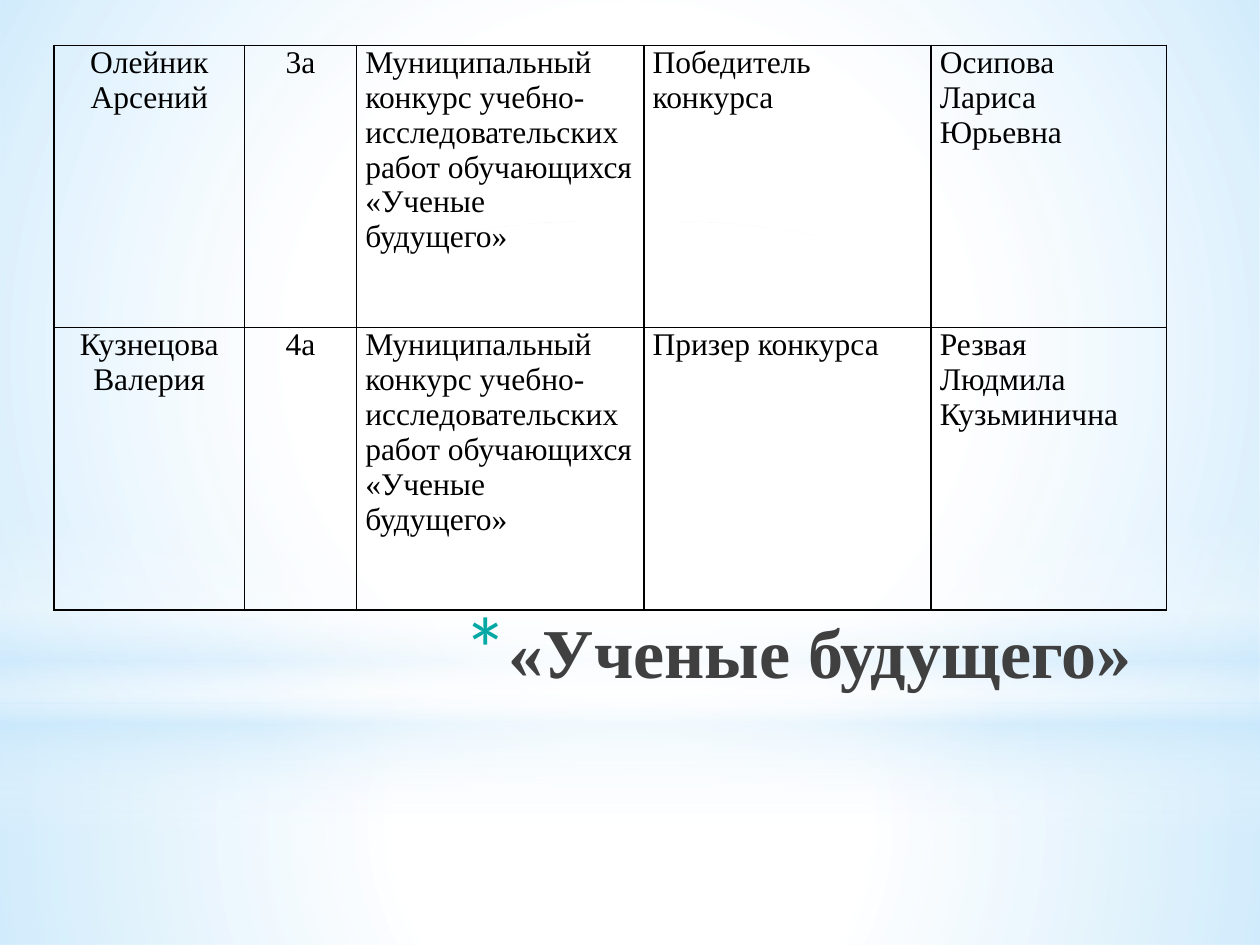
from lxml import etree
from pptx import Presentation
from pptx.dml.color import RGBColor
from pptx.enum.shapes import MSO_SHAPE
from pptx.enum.text import MSO_ANCHOR, PP_ALIGN
from pptx.oxml.ns import qn
from pptx.util import Inches, Pt

RECT, OVAL = MSO_SHAPE.RECTANGLE, MSO_SHAPE.OVAL
CENTER, LEFT, RIGHT = PP_ALIGN.CENTER, PP_ALIGN.LEFT, PP_ALIGN.RIGHT
TOP = MSO_ANCHOR.TOP

THEME = {
    "font": "Times New Roman", "title_size": 40, "cell_size": 18,
    "title": "404040", "text": "000000", "border": "000000",
    "bullet": "04A8A4", "white": "FFFFFF", "sky": "C6E7FC",
}

# Content
TITLE = "«Ученые будущего»"
CONTEST = ("Муниципальный конкурс учебно-исследовательских работ "
           "обучающихся «Ученые будущего»")
ROWS = [
    ("Олейник Арсений", "3а", CONTEST, "Победитель конкурса", "Осипова Лариса Юрьевна"),
    ("Кузнецова Валерия", "4а", CONTEST, "Призер конкурса", "Резвая Людмила Кузьминична"),
]
COLUMNS = [(1.51, CENTER), (0.89, CENTER), (2.28, LEFT), (2.28, LEFT), (1.87, LEFT)]
ROW_HEIGHT = 2.24

# Background: shape, box, linear angle (None is radial), stops (position, colour, opacity)
BACKGROUND = [
    (RECT, (0, 5.58, 10, 1.92), None,
     [(0, "white", 91), (37, "white", 76), (100, "sky", 79)]),
    (RECT, (0, 0, 10, 5.58), None,
     [(0, "white", 89), (48, "white", 62), (100, "sky", 79)]),
    (RECT, (0, 4.12, 10, 2.5), 90,
     [(0, "white", 0), (29, "white", 30), (45, "sky", 40),
      (55, "white", 26), (65, "sky", 60), (100, "white", 0)]),
    (OVAL, (0, 1.75, 10, 5.58), None, [(0, "white", 100), (56, "white", 0)]),
]


def add(parent, tag, **attrs):
    return etree.SubElement(parent, qn(tag), {k: str(v) for k, v in attrs.items()})


def add_glow(slide, kind, box, angle, stops):
    sp = slide.shapes.add_shape(kind, *map(Inches, box))
    sp.shadow.inherit = False
    sp.line.fill.background()
    sp.fill.gradient()
    grad = sp.fill._xPr.find(qn("a:gradFill"))
    for child in list(grad):
        grad.remove(child)
    stop_list = add(grad, "a:gsLst")
    for position, colour, opacity in stops:
        stop = add(stop_list, "a:gs", pos=position * 1000)
        clr = add(stop, "a:srgbClr", val=THEME[colour])
        add(clr, "a:alpha", val=opacity * 1000)
    if angle is None:
        radial = add(grad, "a:path", path="circle")
        add(radial, "a:fillToRect", l=50000, t=50000, r=50000, b=50000)
    else:
        add(grad, "a:lin", ang=angle * 60000, scaled=0)


def add_run(p, text, size, colour, bold=False):
    r = p.add_run()
    r.text = text
    r.font.name, r.font.size, r.font.bold = THEME["font"], Pt(size), bold
    r.font.color.rgb = RGBColor.from_string(colour)


def fill_cell(cell, text, align):
    cell.margin_left = cell.margin_right = Inches(0.07)
    cell.margin_top = cell.margin_bottom = 0
    cell.vertical_anchor = TOP
    p = cell.text_frame.paragraphs[0]
    p.alignment = align
    add_run(p, text, THEME["cell_size"], THEME["text"])
    pr = cell._tc.get_or_add_tcPr()
    for side in ("L", "R", "T", "B"):
        ln = add(pr, f"a:ln{side}", w=Pt(1))
        add(add(ln, "a:solidFill"), "a:srgbClr", val=THEME["border"])
    cell.fill.background()


prs = Presentation()
prs.slide_width, prs.slide_height = Inches(10), Inches(7.5)
slide = prs.slides.add_slide(prs.slide_layouts[5])

for glow in BACKGROUND:
    add_glow(slide, *glow)

# Title, brought in front of the background
title = slide.shapes.title
slide.shapes._spTree.append(title._element)
title.left, title.top, title.width, title.height = map(Inches, (1.96, 4.78, 7.12, 1.25))
tf = title.text_frame
tf.word_wrap, tf.vertical_anchor = True, TOP
p = tf.paragraphs[0]
p.alignment = RIGHT
pr = p._p.get_or_add_pPr()
pr.set("marL", str(Inches(0.35)))
pr.set("indent", str(-Inches(0.35)))
add(add(pr, "a:buClr"), "a:srgbClr", val=THEME["bullet"])
add(pr, "a:buSzPct", val=128000)
add(pr, "a:buFont", typeface="+mj-lt")
add(pr, "a:buChar", char="*")
add_run(p, TITLE, THEME["title_size"], THEME["title"], bold=True)

# Table of winners
width = sum(w for w, _ in COLUMNS)
table = slide.shapes.add_table(
    len(ROWS), len(COLUMNS), Inches(0.43), Inches(0.36),
    Inches(width), Inches(ROW_HEIGHT * len(ROWS))).table
table.first_row = table.horz_banding = False
for column, (w, _) in zip(table.columns, COLUMNS):
    column.width = Inches(w)
for i, row in enumerate(ROWS):
    table.rows[i].height = Inches(ROW_HEIGHT)
    for j, text in enumerate(row):
        fill_cell(table.cell(i, j), text, COLUMNS[j][1])

prs.save("out.pptx")
